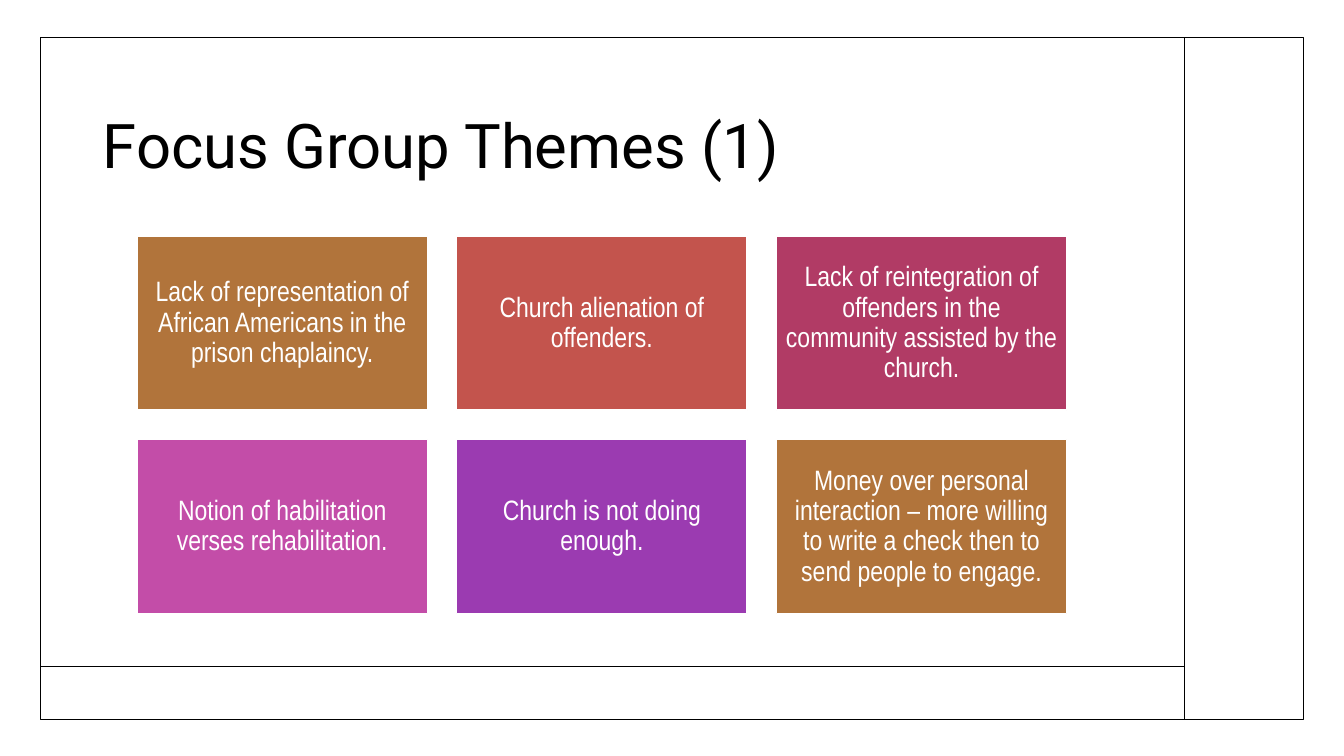
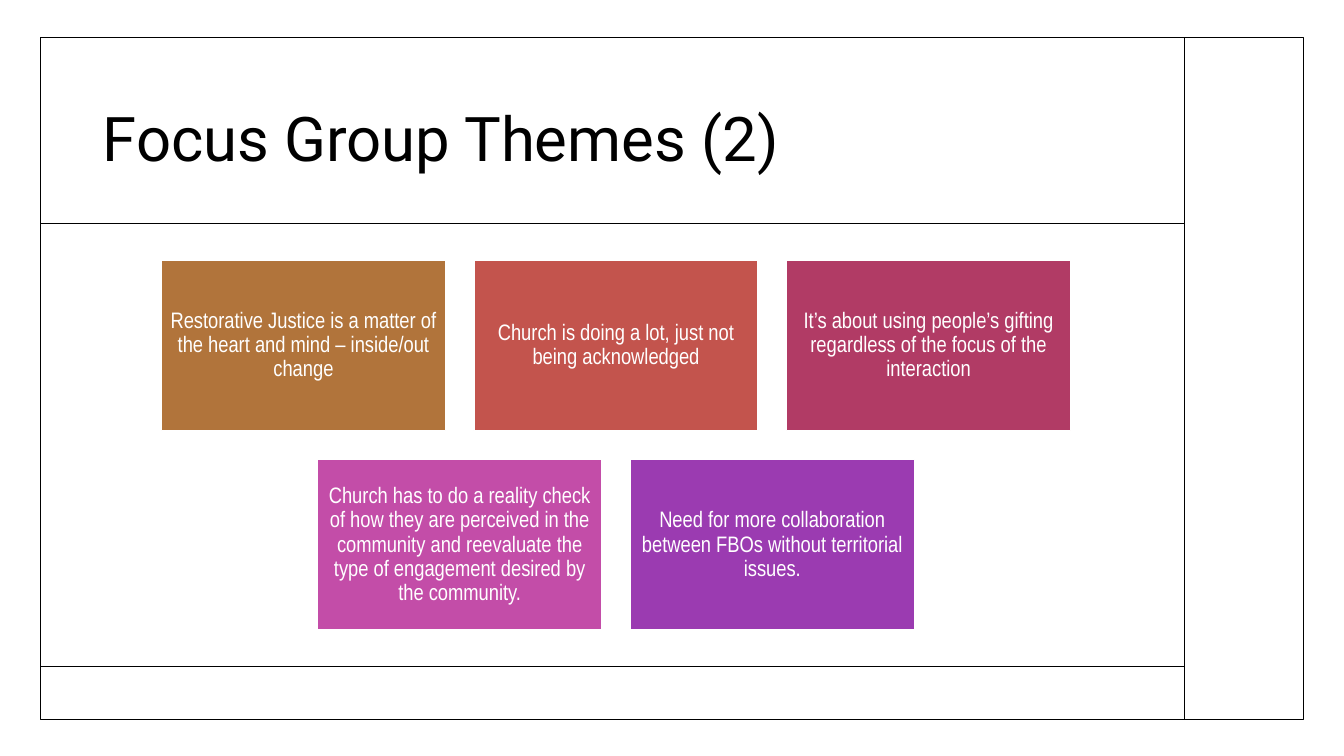
"""Build two focus group slides, each a framed title above a grid of theme cards."""
from lxml import etree
from pptx import Presentation
from pptx import util as u
from pptx.dml.color import RGBColor
from pptx.enum import shapes, text
from pptx.oxml.ns import qn

PX = 9144
COLORS = {"ink": "000000", "paper": "FFFFFF", "ochre": "B1743B", "coral": "C3544D",
          "berry": "B13B65", "pink": "C34DA8", "violet": "9B3BB1"}
CARD_FILLS = ["ochre", "coral", "berry", "pink", "violet"]
FRAME = (40, 37, 1253, 677)
FOOTER = (41, 661, 1175, 661)
SIDEBAR = (1175, 37, 1175, 713)
HEADER = (40, 222, 1175, 222)
TITLE = {"name": "Roboto", "size": u.Pt(44)}
COLUMNS = 3

SLIDES = [
    {"title": "Focus Group Themes (1)", "title_box": (92, 89, 1009, 117),
     "rules": [FOOTER, SIDEBAR],
     "origin": (136, 234), "card": (288, 173), "pitch": (317, 202), "inset": 8, "size": 20,
     "themes": ["Lack of representation of African Americans in the prison chaplaincy.",
                "Church alienation of offenders.",
                "Lack of reintegration of offenders in the community assisted by the church.",
                "Notion of habilitation verses rehabilitation.",
                "Church is not doing enough.",
                "Money over personal interaction – more willing to write a check "
                "then to send people to engage."]},
    {"title": "Focus Group Themes (2)", "title_box": (92, 89, 1038, 102),
     "rules": [HEADER, FOOTER, SIDEBAR],
     "origin": (160, 258), "card": (282, 169), "pitch": (310, 198), "inset": 7, "size": 16,
     "themes": ["Restorative Justice is a matter of the heart and mind – inside/out change",
                "Church is doing a lot, just not being acknowledged",
                "It’s about using people’s gifting regardless of the focus of the interaction",
                "Church has to do a reality check of how they are perceived in the community "
                "and reevaluate the type of engagement desired by the community.",
                "Need for more collaboration between FBOs without territorial issues."]},
]


def add_rect(s, box, line, fill=None):
    sp = s.shapes.add_shape(shapes.MSO_SHAPE.RECTANGLE, *[v * PX for v in box])
    sp.shadow.inherit = False
    sp.line.width = u.Pt(1)
    sp.line.color.rgb = RGBColor.from_string(COLORS[line])
    if fill:
        sp.fill.solid()
        sp.fill.fore_color.rgb = RGBColor.from_string(COLORS[fill])
    else:
        sp.fill.background()
    return sp


def set_text(sp, words, font, color, align, frame):
    tf = sp.text_frame
    frame = {"word_wrap": True, "vertical_anchor": text.MSO_ANCHOR.MIDDLE, **frame}
    for key, value in frame.items():
        setattr(tf, key, value)
    p = tf.paragraphs[0]
    p.alignment = align
    p.line_spacing = 0.9
    r = p.add_run()
    r.text = words
    for key, value in font.items():
        setattr(r.font, key, value)
    r.font.color.rgb = RGBColor.from_string(COLORS[color])


prs = Presentation()
prs.slide_width, prs.slide_height = 1333 * PX, 750 * PX

for page in SLIDES:
    s = prs.slides.add_slide(prs.slide_layouts[6])
    add_rect(s, FRAME, "ink")
    title = s.shapes.add_textbox(*[v * PX for v in page["title_box"]])
    set_text(title, page["title"], TITLE, "ink", text.PP_ALIGN.LEFT, {})

    for rule in page["rules"]:
        line = s.shapes.add_connector(shapes.MSO_CONNECTOR.STRAIGHT, *[v * PX for v in rule])
        line.line.width = u.Pt(1)
        line.line.color.rgb = RGBColor.from_string(COLORS["ink"])
        etree.SubElement(line._element.spPr, qn("a:effectLst"))

    (left, top), (dx, dy) = page["origin"], page["pitch"]
    themes = page["themes"]
    font = {"name": "Arial Narrow", "size": u.Pt(page["size"])}
    margins = {f"margin_{side}": page["inset"] * PX for side in ("left", "top", "right", "bottom")}
    for i, theme in enumerate(themes):
        row, col = divmod(i, COLUMNS)
        in_row = min(COLUMNS, len(themes) - row * COLUMNS)
        indent = (COLUMNS - in_row) * dx // 2
        box = (left + indent + col * dx, top + row * dy, *page["card"])
        card = add_rect(s, box, "paper", CARD_FILLS[i % len(CARD_FILLS)])
        set_text(card, theme, font, "paper", text.PP_ALIGN.CENTER, margins)

prs.save("out.pptx")
